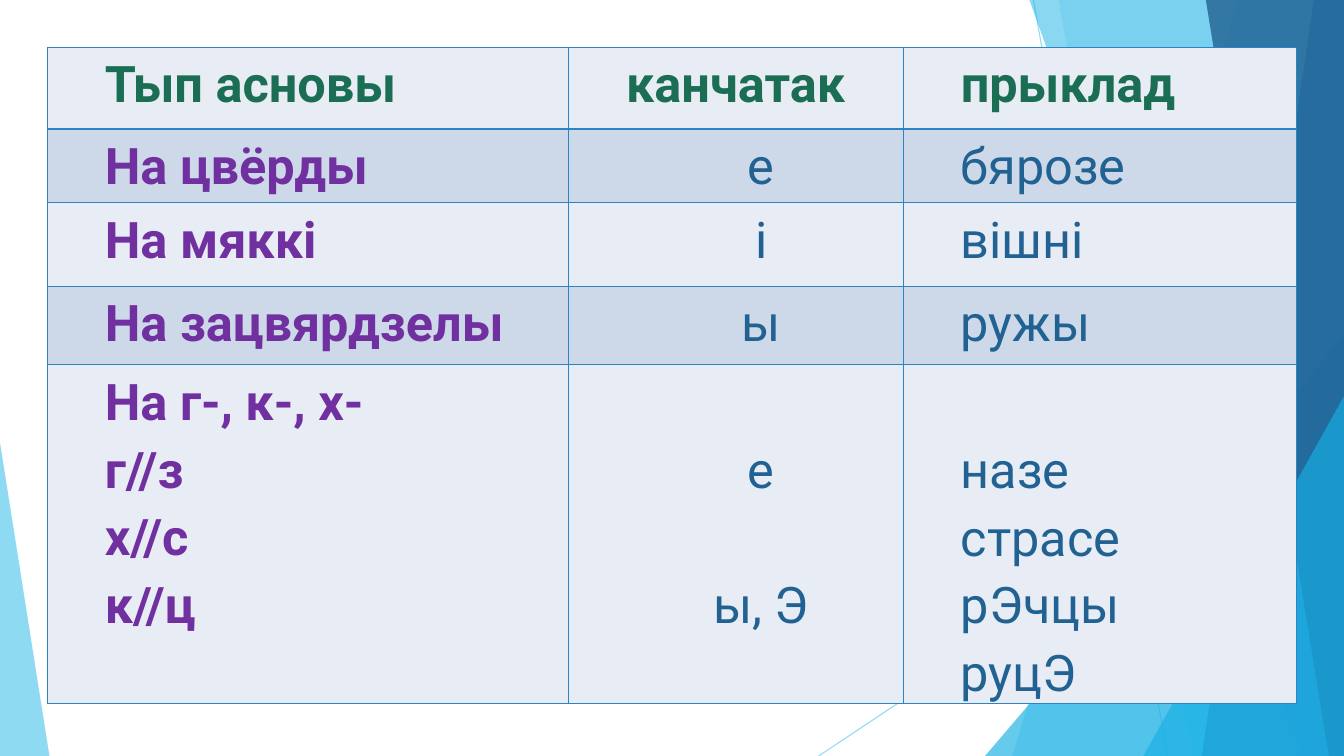
from lxml import etree
from pptx import Presentation
from pptx.dml.color import RGBColor
from pptx.enum.shapes import MSO_CONNECTOR, MSO_SHAPE
from pptx.enum.text import PP_ALIGN
from pptx.oxml.ns import qn
from pptx.util import Inches, Pt

LINE = MSO_CONNECTOR.STRAIGHT
TRIANGLE = MSO_SHAPE.ISOSCELES_TRIANGLE
CENTER, JUSTIFY = PP_ALIGN.CENTER, PP_ALIGN.JUSTIFY

SKY = RGBColor(0x5F, 0xCB, 0xEF)
CYAN = RGBColor(0x17, 0xB0, 0xE4)
BLUE = RGBColor(0x2E, 0x83, 0xC3)
NAVY = RGBColor(0x22, 0x62, 0x92)
GREEN = RGBColor(0x1B, 0x6E, 0x53)
PURPLE = RGBColor(0x70, 0x30, 0xA0)
LIGHT_ROW = RGBColor(0xE8, 0xED, 0xF5)
DARK_ROW = RGBColor(0xCD, 0xD9, 0xE9)

WIDTH, HEIGHT = 13.33, 7.5
FONT, SIZE = "Roboto", 36
LINE_PT = 48.5  # height of one text line at 1.15 spacing

COL_WIDTHS = [5.17, 3.32, 3.9]
ROW_HEIGHTS = [0.81, 0.73, 0.83, 0.78, 3.32]
# An empty string in a cell is a skipped line.
ROWS = [
    (["Тып асновы"], ["канчатак"], ["прыклад"]),
    (["На цвёрды"], ["е"], ["бярозе"]),
    (["На мяккі"], ["і"], ["вішні"]),
    (["На зацвярдзелы"], ["ы"], ["ружы"]),
    (["На г-, к-, х-", "г//з", "х//с", "к//ц"],
     ["", "е", "", "ы, Э"],
     ["", "назе", "страсе", "рЭчцы", "руцЭ"]),
]


def set_alpha(shape, percent):
    for color in shape._element.spPr.iter(qn("a:srgbClr")):
        etree.SubElement(color, qn("a:alpha"), val=str(percent * 1000))


def paint(shape, color, alpha):
    shape.shadow.inherit = False
    shape.fill.solid()
    shape.fill.fore_color.rgb = color
    shape.line.fill.background()
    set_alpha(shape, alpha)


def add_ray(s, x1, y1, x2, y2):
    ray = s.shapes.add_connector(LINE, Inches(x1), Inches(y1), Inches(x2), Inches(y2))
    ray.line.color.rgb = SKY
    ray.line.width = Pt(0.75)
    set_alpha(ray, 70)
    etree.SubElement(ray._element.spPr, qn("a:effectLst"))


def add_band(s, top_x, bottom_x, color, alpha):
    """Fill from a slanted left side to the right edge of the slide."""
    outline = s.shapes.build_freeform(Inches(top_x), 0)
    outline.add_line_segments([
        (Inches(WIDTH), 0), (Inches(WIDTH), Inches(HEIGHT)),
        (Inches(bottom_x), Inches(HEIGHT))])
    paint(outline.convert_to_shape(), color, alpha)


def add_corner(s, left, width, height, apex, color, alpha):
    """Triangle on the bottom edge; apex is 0 at its left, 1 at its right."""
    corner = s.shapes.add_shape(TRIANGLE, Inches(left), Inches(HEIGHT - height),
                                Inches(width), Inches(height))
    corner.adjustments[0] = apex
    paint(corner, color, alpha)


def add_facets(s):
    add_ray(s, 10.25, 0, 11.58, HEIGHT)
    add_ray(s, WIDTH, 4.03, 8.12, HEIGHT)
    add_band(s, 12.28, 10.04, SKY, 36)
    add_band(s, 10.5, 11.83, SKY, 20)
    add_corner(s, 9.77, 3.56, 4.17, 1, CYAN, 66)
    add_band(s, 10.21, 12.91, CYAN, 50)
    add_band(s, 13.03, 11.92, BLUE, 70)
    add_band(s, 11.96, 13.18, NAVY, 80)
    add_corner(s, 11.34, 1.99, 3.57, 1, CYAN, 66)
    add_corner(s, 0, 0.49, 3.11, 0, SKY, 70)


def set_borders(cell):
    tcPr = cell._tc.get_or_add_tcPr()
    for i, side in enumerate(("a:lnL", "a:lnR", "a:lnT", "a:lnB")):
        ln = etree.Element(qn(side), w=str(Pt(1)))
        fill = etree.SubElement(ln, qn("a:solidFill"))
        etree.SubElement(fill, qn("a:srgbClr"), val=str(BLUE))
        tcPr.insert(i, ln)


def fill_cell(cell, lines, color, bold, align):
    cell.margin_left = cell.margin_right = Inches(0.07)
    cell.margin_top = cell.margin_bottom = 0
    tf = cell.text_frame
    skipped, p = 0, None
    for line in lines:
        if not line:
            skipped += 1
            continue
        if p is None:
            p = tf.paragraphs[0]
            cell.margin_top = Pt(skipped * LINE_PT)
        else:
            p = tf.add_paragraph()
            p.space_before = Pt(skipped * LINE_PT)
        skipped = 0
        p.alignment = align
        p.line_spacing = 1.15
        p._p.get_or_add_pPr().set("marL", str(Inches(0.5)))
        r = p.add_run()
        r.text = line
        r.font.name, r.font.size = FONT, Pt(SIZE)
        r.font.bold = bold
        r.font.color.rgb = color


def add_endings_table(s, left, top):
    frame = s.shapes.add_table(len(ROWS), len(COL_WIDTHS), Inches(left), Inches(top),
                               Inches(sum(COL_WIDTHS)), Inches(sum(ROW_HEIGHTS)))
    table = frame.table
    for column, width in zip(table.columns, COL_WIDTHS):
        column.width = Inches(width)
    for i, (row, height) in enumerate(zip(ROWS, ROW_HEIGHTS)):
        table.rows[i].height = Inches(height)
        for j, lines in enumerate(row):
            cell = table.cell(i, j)
            cell.fill.solid()
            cell.fill.fore_color.rgb = DARK_ROW if i % 2 else LIGHT_ROW
            set_borders(cell)
            color = GREEN if i == 0 else PURPLE if j == 0 else NAVY
            align = CENTER if i and j == 1 else JUSTIFY
            fill_cell(cell, lines, color, i == 0 or j == 0, align)


def main():
    prs = Presentation()
    prs.slide_width, prs.slide_height = Inches(WIDTH), Inches(HEIGHT)
    s = prs.slides.add_slide(prs.slide_layouts[6])
    add_facets(s)
    add_endings_table(s, 0.47, 0.47)
    prs.save("out.pptx")


if __name__ == "__main__":
    main()
